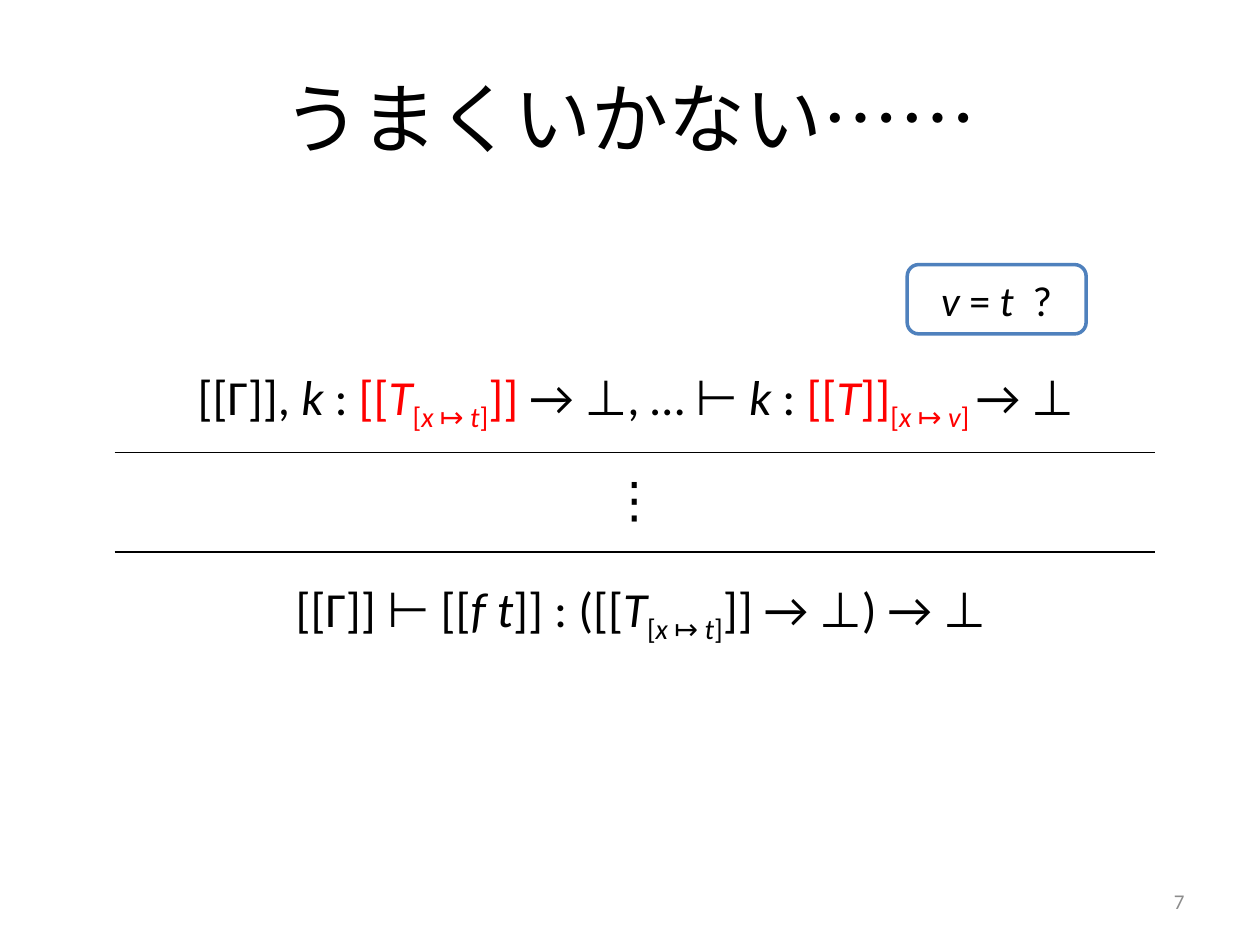
from lxml import etree
from pptx import Presentation
from pptx.dml.color import RGBColor
from pptx.enum.shapes import MSO_CONNECTOR, MSO_SHAPE
from pptx.enum.text import MSO_ANCHOR, PP_ALIGN
from pptx.oxml.ns import qn
from pptx.util import Inches, Pt

STRAIGHT = MSO_CONNECTOR.STRAIGHT
ROUNDED = MSO_SHAPE.ROUNDED_RECTANGLE
TOP, MIDDLE = MSO_ANCHOR.TOP, MSO_ANCHOR.MIDDLE
CENTER, RIGHT = PP_ALIGN.CENTER, PP_ALIGN.RIGHT

BLACK = RGBColor(0x00, 0x00, 0x00)
RED = RGBColor(0xFF, 0x00, 0x00)
GRAY = RGBColor(0x8C, 0x8C, 0x8C)
BLUE = RGBColor(0x4F, 0x81, 0xBD)
WHITE = RGBColor(0xFF, 0xFF, 0xFF)
FONT = "Calibri"

# style letters: i italic, r red, s subscript
TITLE = [("うまくいかない……", "")]
PREMISE = [
    ("[[Γ]], ", ""), ("k", "i"), (" : ", ""),
    ("[[", "r"), ("T", "ri"), ("[", "rs"), ("x ", "rsi"), ("↦ ", "rs"),
    ("t", "rsi"), ("]", "rs"), ("]] ", "r"),
    ("→ ⊥, … ⊢ ", ""), ("k", "i"), (" : ", ""),
    ("[[", "r"), ("T", "ri"), ("]]", "r"), ("[", "rs"), ("x", "rsi"),
    (" ↦ ", "rs"), ("v", "rsi"), ("] ", "rs"), ("→ ⊥", ""),
]
DOTS = [("⋮", "")]
CONCLUSION = [
    ("[[Γ]] ⊢ [[", ""), ("f t", "i"), ("]] : ([[", ""), ("T", "i"),
    ("[", "s"), ("x", "si"), (" ↦ ", "s"), ("t", "si"), ("]", "s"),
    ("]] → ⊥) → ⊥", ""),
]
QUESTION = [("v", "i"), (" = ", ""), ("t", "i"), ("  ?", "")]
NUMBER = [("7", "")]

TEXT_BOXES = [
    (PREMISE, (0.87, 2.86, 8.35, 0.57), 28, BLACK, CENTER, TOP),
    (DOTS, (4.21, 3.67, 1.65, 0.57), 28, BLACK, CENTER, TOP),
    (CONCLUSION, (0.91, 4.54, 8.35, 0.57), 28, BLACK, CENTER, TOP),
    (NUMBER, (7.17, 6.95, 2.33, 0.4), 12, GRAY, RIGHT, MIDDLE),
]
RULE_LEFT, RULE_RIGHT = 0.91, 9.17
RULE_TOPS = [3.59, 4.38]
TITLE_BOX = (0.5, 0.3, 9, 1.25)
QUESTION_BOX = (7.2, 2.1, 1.42, 0.55)


def inches(box):
    return [Inches(v) for v in box]


def write(sp, runs, size, color=BLACK, align=CENTER, anchor=MIDDLE):
    tf = sp.text_frame
    tf.word_wrap = True
    tf.vertical_anchor = anchor
    p = tf.paragraphs[0]
    p.alignment = align
    for text, style in runs:
        r = p.add_run()
        r.text = text
        r.font.name = FONT
        r.font.size = Pt(size)
        r.font.italic = "i" in style
        r.font.color.rgb = RED if "r" in style else color
        if "s" in style:
            r.font._element.set("baseline", "-25000")


def add_rule(s, top):
    line = s.shapes.add_connector(
        STRAIGHT, *inches((RULE_LEFT, top, RULE_RIGHT, top)))
    line.line.color.rgb = BLACK
    line.line.width = Pt(0.75)
    etree.SubElement(line._element.spPr, qn("a:effectLst"))


def add_question(s):
    sp = s.shapes.add_shape(ROUNDED, *inches(QUESTION_BOX))
    sp.shadow.inherit = False
    sp.fill.solid()
    sp.fill.fore_color.rgb = WHITE
    sp.line.color.rgb = BLUE
    sp.line.width = Pt(2)
    write(sp, QUESTION, 24)


def main():
    prs = Presentation()
    prs.slide_width, prs.slide_height = Inches(10), Inches(7.5)
    s = prs.slides.add_slide(prs.slide_layouts[5])
    title = s.shapes.title
    title.left, title.top, title.width, title.height = inches(TITLE_BOX)
    write(title, TITLE, 44)
    for runs, box, size, color, align, anchor in TEXT_BOXES:
        write(s.shapes.add_textbox(*inches(box)), runs, size, color, align, anchor)
    for top in RULE_TOPS:
        add_rule(s, top)
    add_question(s)
    prs.save("out.pptx")


if __name__ == "__main__":
    main()
